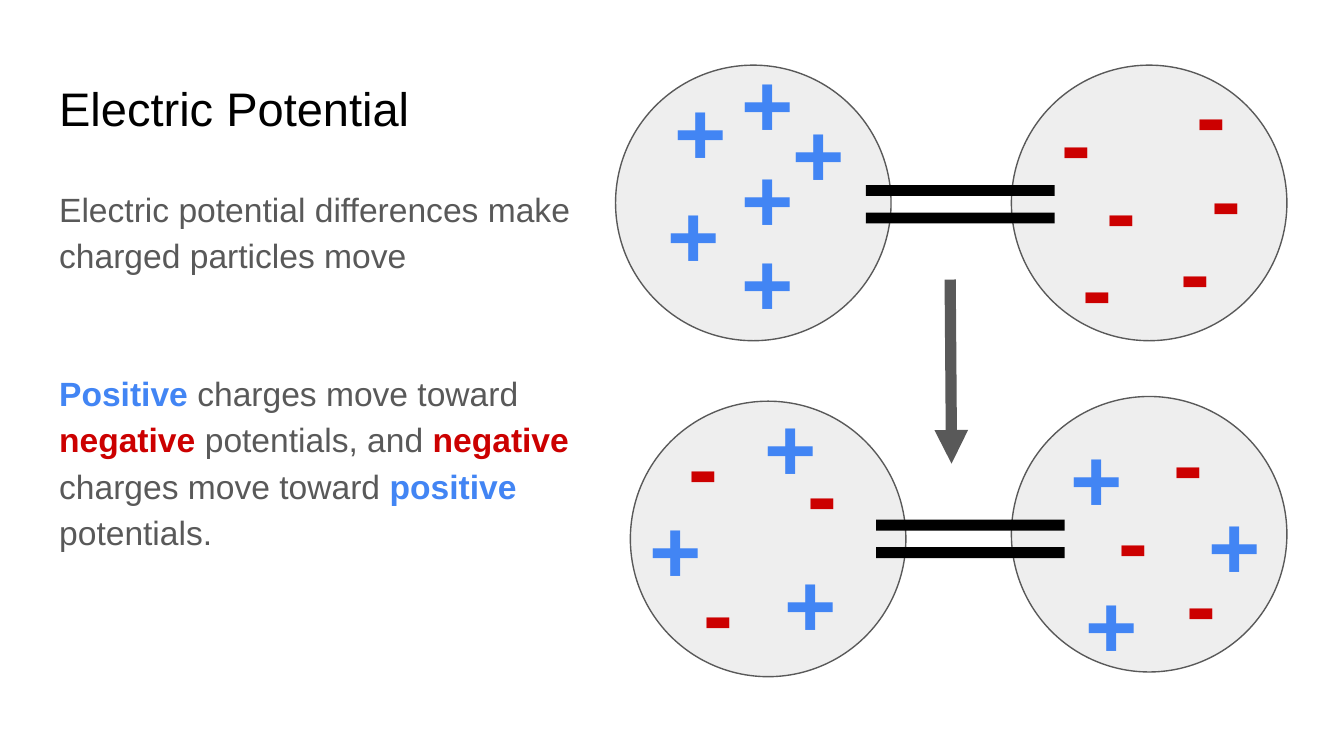
from dataclasses import dataclass

from lxml import etree
from pptx import Presentation
from pptx.dml.color import RGBColor
from pptx.enum.shapes import MSO_CONNECTOR, MSO_SHAPE
from pptx.enum.text import MSO_ANCHOR, MSO_AUTO_SIZE, PP_ALIGN
from pptx.oxml.ns import qn
from pptx.util import Inches, Pt

ELLIPSE, EQUAL = MSO_SHAPE.OVAL, MSO_SHAPE.MATH_EQUAL
STRAIGHT = MSO_CONNECTOR.STRAIGHT
TOP, MIDDLE = MSO_ANCHOR.TOP, MSO_ANCHOR.MIDDLE
LEFT, CENTER = PP_ALIGN.LEFT, PP_ALIGN.CENTER
NO_FIT = MSO_AUTO_SIZE.NONE

# Grid of square cells: 100 columns by 56.25 rows (16:9)
COLS, ROWS = 100, 56.25
CELL = Inches(0.1)


@dataclass(frozen=True)
class Theme:
    font: str = "Arial"
    title: str = "000000"
    text: str = "595959"
    dish: str = "EEEEEE"
    bridge: str = "000000"
    positive: str = "4285F4"
    negative: str = "CC0000"
    title_size: float = 25.2
    body_size: float = 18
    charge_size: float = 48
    outline: float = 0.75
    arrow: float = 6


class Deck:
    def __init__(self, prs, theme):
        self.theme = theme
        self.s = prs.slides.add_slide(prs.slide_layouts[1])

    @staticmethod
    def grid(*cells):
        return [round(c * CELL) for c in cells]

    def place(self, sp, *box):
        sp.left, sp.top, sp.width, sp.height = self.grid(*box)

    def frame(self, sp, anchor):
        tf = sp.text_frame
        tf.word_wrap, tf.auto_size = True, NO_FIT
        tf.margin_left = tf.margin_right = tf.margin_top = tf.margin_bottom = CELL
        tf.vertical_anchor = anchor
        return tf

    def run(self, p, text, size, color, bold=False):
        r = p.add_run()
        r.text = text
        r.font.name, r.font.size, r.font.bold = self.theme.font, Pt(size), bold
        r.font.color.rgb = RGBColor.from_string(color)

    def title(self, text, *box):
        sp = self.s.shapes.title
        self.place(sp, *box)
        p = self.frame(sp, MIDDLE).paragraphs[0]
        p.alignment = LEFT
        self.run(p, text, self.theme.title_size, self.theme.title)

    def body(self, paragraphs, gap, *box):
        sp = self.s.placeholders[1]
        self.place(sp, *box)
        tf = self.frame(sp, TOP)
        for i, runs in enumerate(paragraphs):
            p = tf.add_paragraph() if i else tf.paragraphs[0]
            p.alignment, p.line_spacing = LEFT, 1.15
            p.space_before, p.space_after = Pt(gap if i else 0), Pt(0)
            # No bullet, no hanging indent
            pPr = p._p.get_or_add_pPr()
            pPr.set("marL", "0")
            pPr.set("indent", "0")
            etree.SubElement(pPr, qn("a:buNone"))
            for text, color in runs:
                self.run(p, text, self.theme.body_size, color,
                         color != self.theme.text)

    def shape(self, kind, fill, *box):
        sp = self.s.shapes.add_shape(kind, *self.grid(*box))
        sp.shadow.inherit = False
        sp.fill.solid()
        sp.fill.fore_color.rgb = RGBColor.from_string(fill)
        sp.line.fill.background()
        return sp

    def dish(self, x, y):
        sp = self.shape(ELLIPSE, self.theme.dish, x, y, 20.5, 20.5)
        sp.line.color.rgb = RGBColor.from_string(self.theme.text)
        sp.line.width = Pt(self.theme.outline)

    def bridge(self, x, y):
        sp = self.shape(EQUAL, self.theme.bridge, x, y, 19.1, 10.5)
        sp.adjustments[0], sp.adjustments[1] = 0.077, 0.118

    def charge(self, sign, color, x, y):
        sp = self.s.shapes.add_textbox(*self.grid(x, y, 6.6, 6.3))
        p = self.frame(sp, MIDDLE).paragraphs[0]
        p.alignment = CENTER
        self.run(p, sign, self.theme.charge_size, color, True)

    def arrow(self, *ends):
        c = self.s.shapes.add_connector(STRAIGHT, *self.grid(*ends))
        c.line.color.rgb = RGBColor.from_string(self.theme.text)
        c.line.width = Pt(self.theme.arrow)
        etree.SubElement(c.line._get_or_add_ln(), qn("a:tailEnd"), type="triangle")
        etree.SubElement(c._element.spPr, qn("a:effectLst"))


# Each state: dishes, bridge, then the top-left corners of the charges
BEFORE = dict(
    dishes=[(45.8, 4.85), (75.25, 4.85)],
    bridge=(61.9, 9.95),
    plus=[(48.8, 6.5), (57.6, 8.15), (48.3, 14.2),
          (53.8, 11.5), (53.8, 17.75), (53.8, 4.45)],
    minus=[(76.8, 7.3), (80.15, 12.4), (87.95, 11.5),
           (78.35, 18.1), (85.65, 16.9), (86.85, 5.25)],
)
AFTER = dict(
    dishes=[(46.9, 29.85), (75.25, 29.5)],
    bridge=(62.65, 34.85),
    plus=[(55.5, 30), (46.95, 37.6), (57, 41.6),
          (79.45, 43.2), (88.6, 37.3), (78.3, 32.35)],
    minus=[(49.05, 31.4), (57.9, 33.45), (50.15, 42.3),
           (85.15, 31.15), (81, 36.95), (86.1, 41.6)],
)


def main():
    prs = Presentation()
    prs.slide_width, prs.slide_height = Deck.grid(COLS, ROWS)
    theme = Theme()
    deck = Deck(prs, theme)
    text, pos, neg = theme.text, theme.positive, theme.negative

    # Title and explanation
    deck.title("Electric Potential", 3.4, 4.85, 93.2, 6.3)
    deck.body([
        [("Electric potential differences make charged particles move", text)],
        [("Positive", pos), (" charges move toward ", text),
         ("negative ", neg), ("potentials, and ", text),
         ("negative", neg), (" charges move toward ", text),
         ("positive", pos), (" potentials.", text)],
    ], 49, 3.4, 12.6, 41.6, 37.4)

    # Separated charges above, mixed charges below
    for state in (BEFORE, AFTER):
        for corner in state["dishes"]:
            deck.dish(*corner)
        deck.bridge(*state["bridge"])
        for corner in state["plus"]:
            deck.charge("+", pos, *corner)
        for corner in state["minus"]:
            deck.charge("-", neg, *corner)

    # Change from the first state to the second
    deck.arrow(70.7, 20.8, 70.8, 34.5)

    prs.save("out.pptx")


if __name__ == "__main__":
    main()
